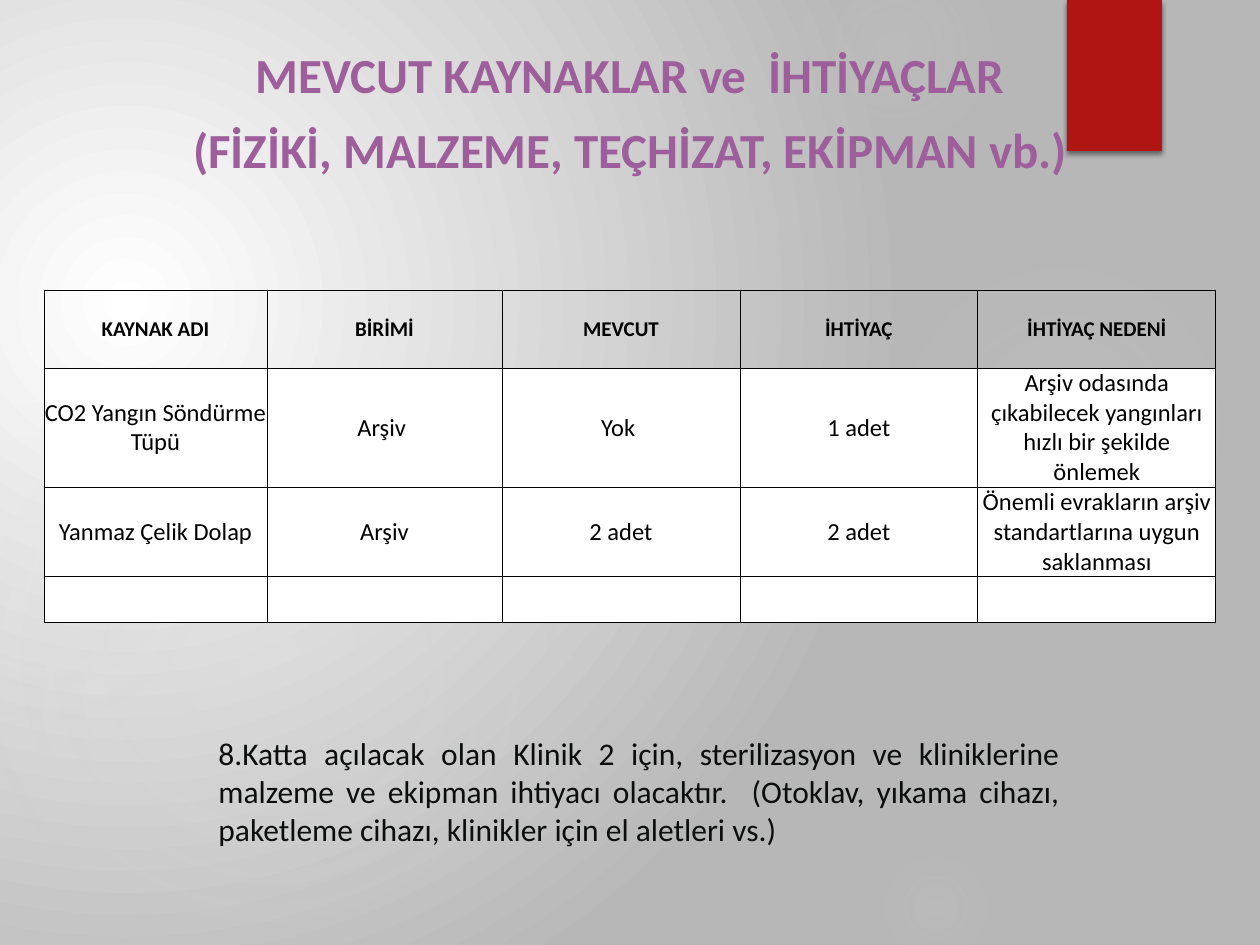
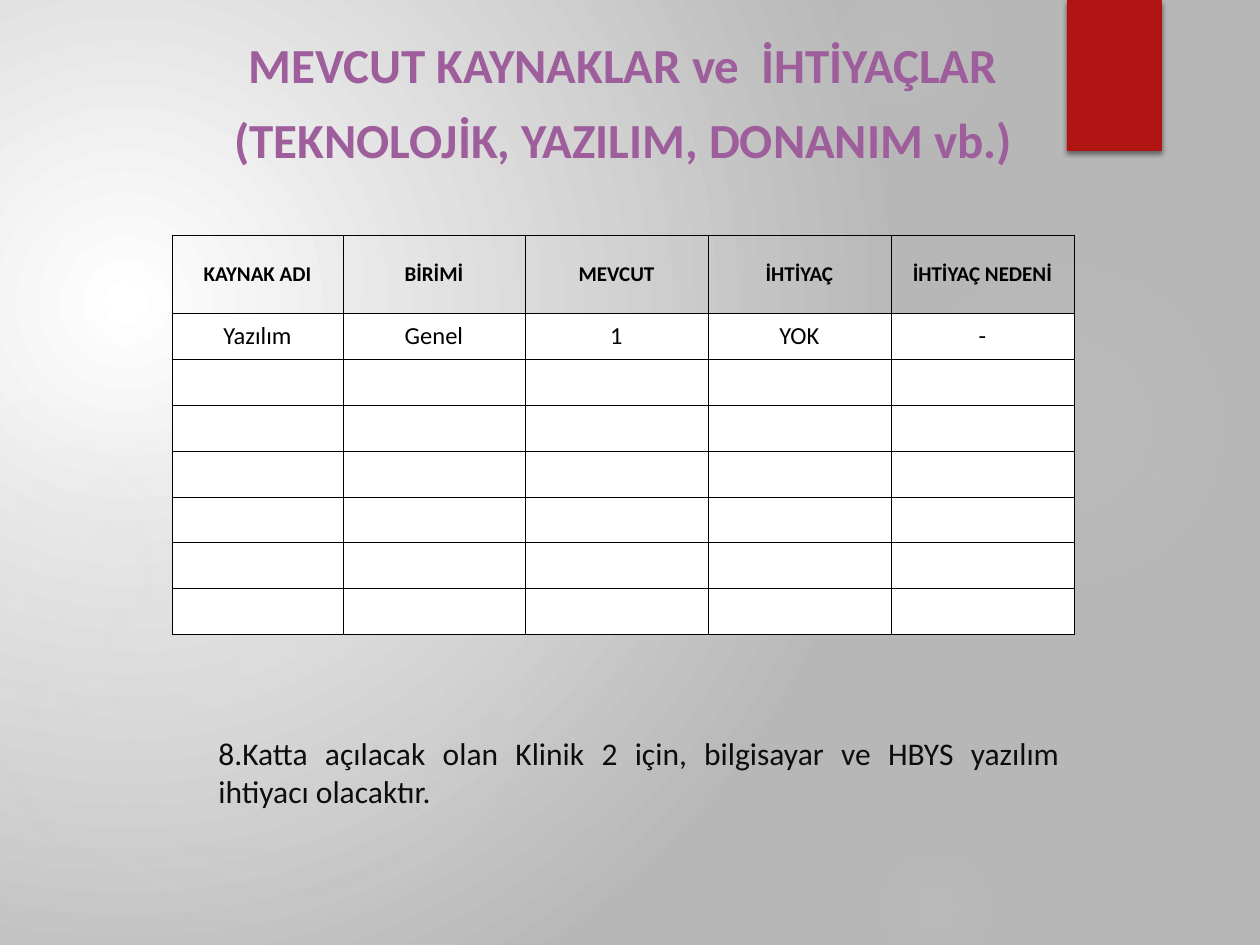
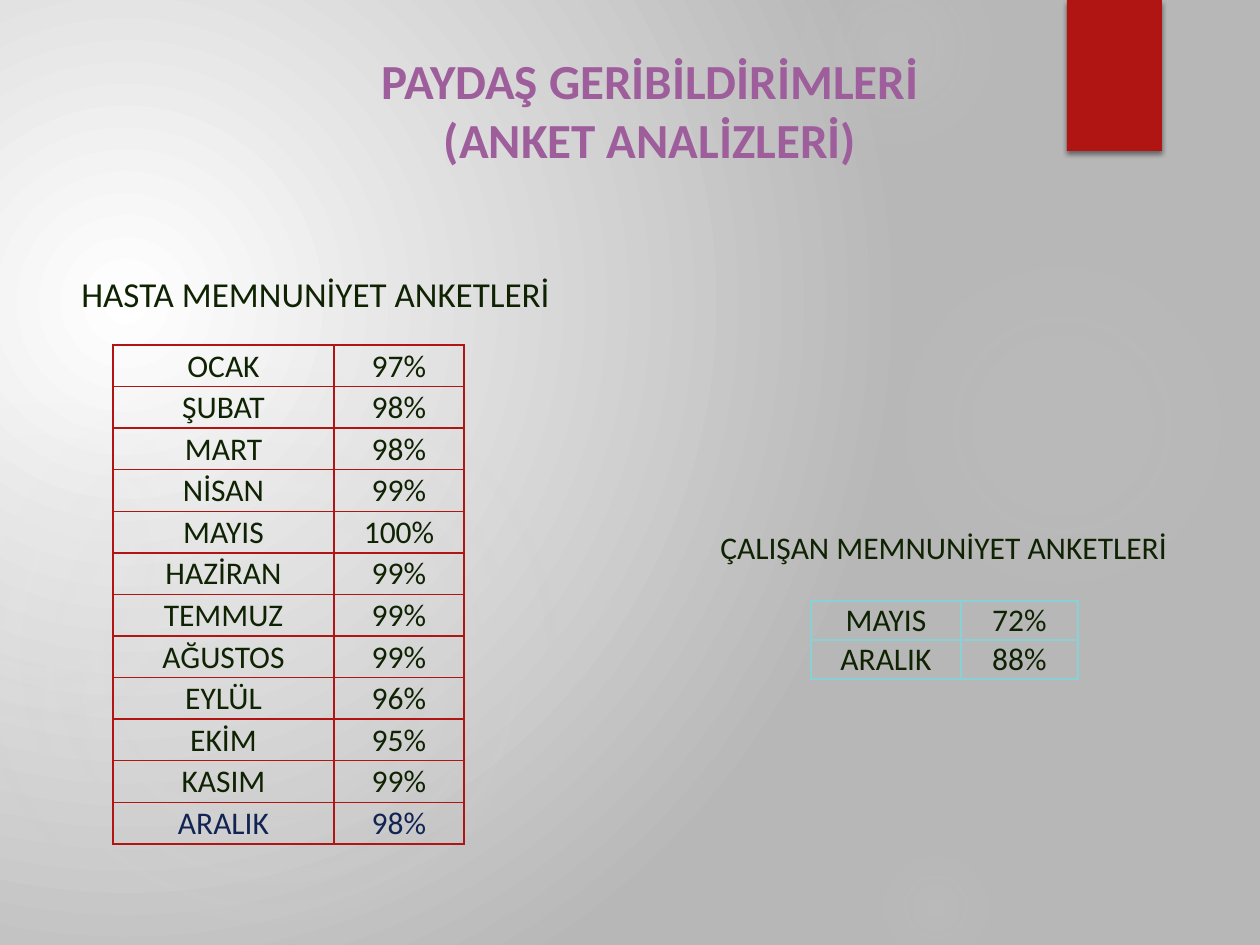
from lxml.etree import SubElement
from pptx import Presentation
from pptx.dml.color import RGBColor
from pptx.enum.shapes import MSO_SHAPE
from pptx.enum.text import MSO_ANCHOR, MSO_AUTO_SIZE, PP_ALIGN
from pptx.oxml import parse_xml
from pptx.oxml.ns import nsdecls, qn
from pptx.util import Pt

SCALE = 914400 / 126
FONT = "Calibri"
WHITE = RGBColor(0xFF, 0xFF, 0xFF)
BLACK = RGBColor(0, 0, 0)
SILVER = RGBColor(0xB7, 0xB7, 0xB7)
MIST = RGBColor(0xD9, 0xD9, 0xD9)
RED = RGBColor(0xB0, 0x15, 0x13)
PLUM = RGBColor(0x9E, 0x5E, 0x9B)
INK = RGBColor(0x0C, 0x0D, 0x0D)
GREEN = RGBColor(0x0F, 0x23, 0x03)
NAVY = RGBColor(0x12, 0x24, 0x54)
AQUA = RGBColor(0x8A, 0xD0, 0xD5)

# Glows: left, top, size, then (position, opacity) stops in percent
GLOWS = [
    (868, 231, 388, [(0, 7), (36, 6), (69, 0)]),
    (784, -63, 221, [(0, 14), (36, 7), (73, 0)]),
    (868, 840, 136, [(0, 9), (36, 5), (66, 0)]),
    (-21, 368, 577, [(0, 11), (36, 10), (75, 0)]),
    (-116, 399, 325, [(0, 8), (36, 8), (72, 0)]),
]
HEADS = ["KAYNAK ADI", "BİRİMİ", "MEVCUT", "İHTİYAÇ", "İHTİYAÇ NEDENİ"]
BLANK = [""] * 5
MONTHS = ["OCAK", "ŞUBAT", "MART", "NİSAN", "MAYIS", "HAZİRAN", "TEMMUZ",
          "AĞUSTOS", "EYLÜL", "EKİM", "KASIM", "ARALIK"]
SCORES = [97, 98, 98, 99, 100, 99, 99, 99, 96, 95, 99, 98]


def px(num):
    return round(num * SCALE)


def radial(owner, stops, focus):
    """Swap the solid fill of owner for a circular gradient."""
    marks = "".join(
        f'<a:gs pos="{pos * 1000}"><a:srgbClr val="{tint}">'
        f'<a:alpha val="{alpha * 1000}"/></a:srgbClr></a:gs>'
        for pos, tint, alpha in stops)
    rect = " ".join(f'{side}="{num * 1000}"' for side, num in zip("ltrb", focus))
    grad = parse_xml(
        f'<a:gradFill {nsdecls("a")} rotWithShape="1"><a:gsLst>{marks}</a:gsLst>'
        f'<a:path path="circle"><a:fillToRect {rect}/></a:path></a:gradFill>')
    owner.replace(owner.find(qn("a:solidFill")), grad)


class Deck:
    def __init__(self):
        self.prs = Presentation()
        self.prs.slide_width, self.prs.slide_height = px(1260), px(945)
        self.slide = None

    def start(self):
        self.slide = self.prs.slides.add_slide(self.prs.slide_layouts[5])

    def style(self, para, size, color, bold=False, align=PP_ALIGN.LEFT):
        para.alignment = align
        font = para.font
        font.name, font.size, font.bold = FONT, Pt(size), bold
        font.color.rgb = color

    def shape(self, kind, x, y, w, h, color):
        item = self.slide.shapes.add_shape(kind, px(x), px(y), px(w), px(h))
        item.shadow.inherit = False
        item.fill.solid()
        item.fill.fore_color.rgb = color
        item.line.fill.background()
        return item

    def backdrop(self):
        """Put the background, the glows and the red tab on the master."""
        master = self.prs.slide_master
        master.background.fill.solid()
        radial(master.element.xpath("p:cSld/p:bg/p:bgPr")[0],
               [(0, WHITE, 100), (100, SILVER, 100)], (45, 65, 125, 100))
        items = []
        for x, y, size, stops in GLOWS:
            glow = self.shape(MSO_SHAPE.OVAL, x, y, size, size, MIST)
            radial(glow.element.spPr, [(pos, MIST, alpha) for pos, alpha in stops],
                   (50, 50, 50, 50))
            items.append(glow)
        tab = self.shape(MSO_SHAPE.RECTANGLE, 1067, 0, 95, 151, RED)
        tab.element.spPr.find(qn("a:effectLst")).append(parse_xml(
            f'<a:outerShdw {nsdecls("a")} blurRad="38100" dist="25400" dir="5400000">'
            '<a:srgbClr val="000000"><a:alpha val="45000"/></a:srgbClr></a:outerShdw>'))
        for num, item in enumerate(items + [tab], 20):
            item.element.nvSpPr.cNvPr.id = num
            master.shapes.element.append(item.element)

    def title(self, x, y, w, h, lines, anchor=MSO_ANCHOR.BOTTOM, lead=1.1, after=6):
        item = self.slide.shapes.title
        item.left, item.top, item.width, item.height = map(px, (x, y, w, h))
        frame = item.text_frame
        frame.text = "\n".join(lines)
        frame.auto_size = MSO_AUTO_SIZE.NONE
        frame.vertical_anchor = anchor
        for para in frame.paragraphs:
            self.style(para, 28, PLUM, True, PP_ALIGN.CENTER)
            para.line_spacing, para.space_after = lead, Pt(after)

    def note(self, x, y, w, h, text, size=18, color=GREEN, align=PP_ALIGN.LEFT):
        box = self.slide.shapes.add_textbox(px(x), px(y), px(w), px(h))
        frame = box.text_frame
        frame.word_wrap = True
        frame.auto_size = MSO_AUTO_SIZE.SHAPE_TO_FIT_TEXT
        frame.text = text
        self.style(frame.paragraphs[0], size, color, align=align)

    def cell(self, cell, text, size, color, bold, fill, pad, edge, thick):
        cell.text = text
        cell.vertical_anchor = MSO_ANCHOR.MIDDLE
        cell.margin_left = cell.margin_top = cell.margin_right = px(pad)
        cell.margin_bottom = 0
        self.style(cell.text_frame.paragraphs[0], size, color, bold, PP_ALIGN.CENTER)
        if fill is None:
            cell.fill.background()
        else:
            cell.fill.solid()
            cell.fill.fore_color.rgb = fill
        props = cell._tc.get_or_add_tcPr()
        for spot, side in enumerate("LRTB"):
            line = SubElement(props, qn(f"a:ln{side}"), w=str(Pt(thick)))
            SubElement(SubElement(line, qn("a:solidFill")), qn("a:srgbClr"),
                       val=str(edge))
            props.insert(spot, line)

    def table(self, x, y, cols, high, rows, head=0, size=18, color=GREEN,
              last=None, fill=None, pad=1, edge=RED, thick=1):
        """Draw a table; head is the height of a bold first row, if any."""
        grid = self.slide.shapes.add_table(
            len(rows), len(cols), px(x), px(y), px(sum(cols)), px(high)).table
        grid.first_row = grid.horz_banding = False
        for col, width in zip(grid.columns, cols):
            col.width = px(width)
        body = (high - head) / (len(rows) - bool(head))
        for num, texts in enumerate(rows):
            top = bool(head) and num == 0
            grid.rows[num].height = px(head if top else body)
            tint = last if last and num == len(rows) - 1 else color
            for col, text in enumerate(texts):
                self.cell(grid.cell(num, col), text, 12 if top else size, tint,
                          top, None if top else fill, pad, edge, thick)

    def needs(self, x, y, cols, high, rows):
        """Draw a table of resources and needs."""
        self.table(x, y, cols, high, [HEADS] + rows, head=78, size=14,
                   color=BLACK, fill=WHITE, pad=0, edge=BLACK, thick=0.5)


def main():
    deck = Deck()

    # Physical resources
    deck.start()
    deck.backdrop()
    deck.title(65, 105, 1130, 80, ["MEVCUT KAYNAKLAR ve  İHTİYAÇLAR",
                                   "(FİZİKİ, MALZEME, TEÇHİZAT, EKİPMAN vb.)"])
    deck.needs(44, 290, [223, 235, 238, 238, 238], 216, [
        ["CO2 Yangın Söndürme Tüpü", "Arşiv ", "Yok ", "1 adet",
         "Arşiv odasında çıkabilecek yangınları hızlı bir şekilde önlemek"],
        ["Yanmaz Çelik Dolap", "Arşiv", "2 adet", "2 adet",
         "Önemli evrakların arşiv standartlarına uygun saklanması"],
        BLANK])
    deck.note(206, 728, 866, 127,
              "8.Katta açılacak olan Klinik 2 için, sterilizasyon ve kliniklerine "
              "malzeme ve ekipman ihtiyacı olacaktır.  (Otoklav, yıkama cihazı, "
              "paketleme cihazı, klinikler için el aletleri vs.)",
              color=INK, align=PP_ALIGN.JUSTIFY)

    # Technology resources
    deck.start()
    deck.title(217, 48, 812, 127, ["MEVCUT KAYNAKLAR ve  İHTİYAÇLAR",
                                   "(TEKNOLOJİK, YAZILIM, DONANIM vb.)"])
    deck.needs(172, 235, [171, 182, 183, 183, 183], 400,
               [["Yazılım", "Genel", "1", "YOK", "-"]] + [BLANK] * 6)
    deck.note(206, 728, 866, 89,
              "8.Katta açılacak olan Klinik 2 için, bilgisayar ve HBYS yazılım "
              "ihtiyacı olacaktır.", color=INK, align=PP_ALIGN.JUSTIFY)

    # Survey results
    deck.start()
    deck.title(273, 44, 754, 131, ["PAYDAŞ GERİBİLDİRİMLERİ", "(ANKET ANALİZLERİ)"],
               MSO_ANCHOR.TOP, 1.0, 0)
    deck.note(69, 266, 543, 55, "HASTA MEMNUNİYET ANKETLERİ", 20)
    deck.note(708, 522, 474, 50, "ÇALIŞAN MEMNUNİYET ANKETLERİ")
    deck.table(113, 345, [221, 130], 499,
               [(month, f"{score}%") for month, score in zip(MONTHS, SCORES)],
               last=NAVY)
    deck.table(811, 601, [150, 117], 78, [("MAYIS", "72%"), ("ARALIK", "88%")],
               edge=AQUA)

    deck.prs.save("out.pptx")


if __name__ == "__main__":
    main()
